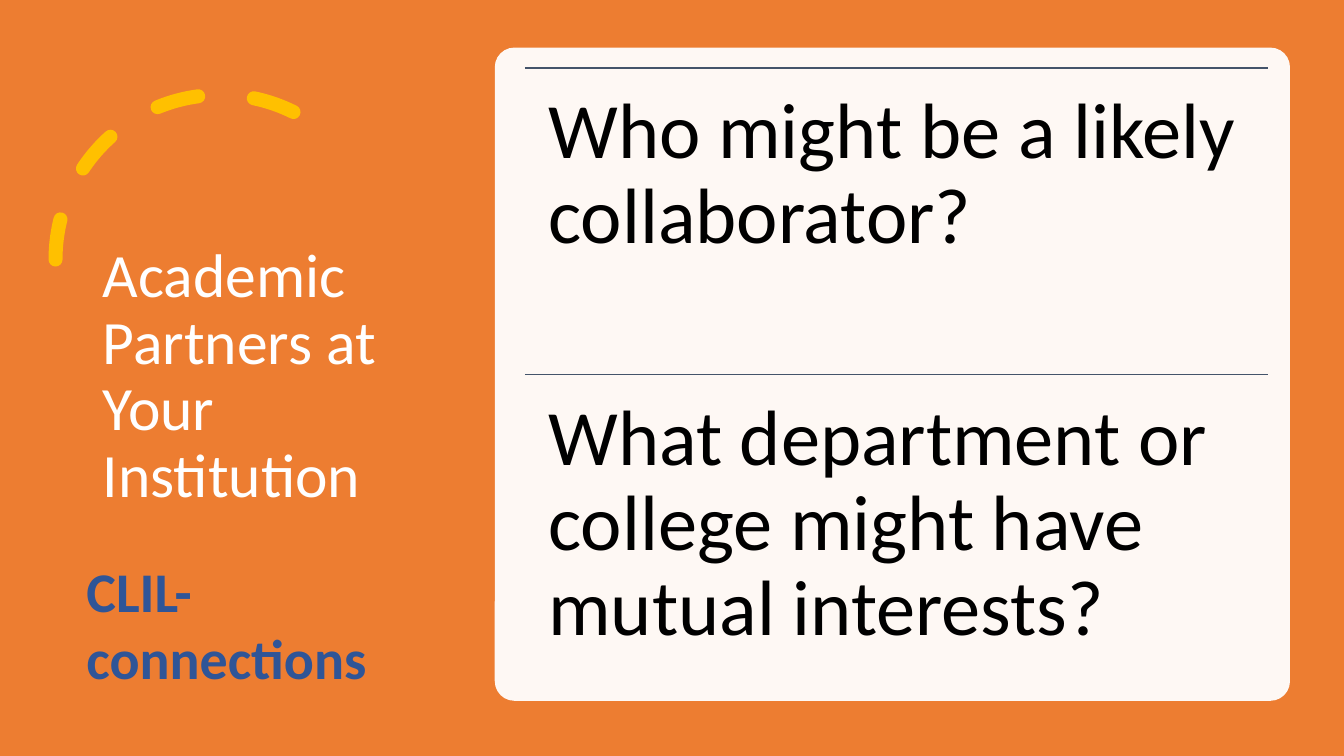
from lxml import etree
from pptx import Presentation
from pptx.dml.color import RGBColor
from pptx.enum import dml, shapes, text
from pptx.oxml import ns
from pptx.util import Cm, Pt

ORANGE = RGBColor(0xED, 0x7D, 0x31)
GOLD = RGBColor(0xFF, 0xC0, 0x00)
WHITE = RGBColor(0xFF, 0xFF, 0xFF)
BLACK = RGBColor(0x00, 0x00, 0x00)
SLATE = RGBColor(0x44, 0x54, 0x6A)
BLUE = RGBColor(0x2F, 0x55, 0x97)

FONT = "Calibri"
WIDTH, HEIGHT = Cm(33.87), Cm(19.05)
QUESTIONS = [
    "Who might be a likely collaborator?",
    "What department or college might have mutual interests?",
]


def add_shape(slide, kind, box, fill=None):
    sp = slide.shapes.add_shape(kind, *box)
    sp.shadow.inherit = False
    sp.line.fill.background()
    if fill is None:
        sp.fill.background()
    else:
        sp.fill.solid()
        sp.fill.fore_color.rgb = fill
    return sp


def add_text(slide, box, words, size, color, bold=False, spacing=0.9,
             anchor=text.MSO_ANCHOR.TOP, inset=None):
    tf = slide.shapes.add_textbox(*box).text_frame
    tf.word_wrap = True
    tf.vertical_anchor = anchor
    if inset is not None:
        tf.margin_left = tf.margin_right = inset
        tf.margin_top = tf.margin_bottom = inset
    p = tf.paragraphs[0]
    p.line_spacing = spacing
    r = p.add_run()
    r.text = words
    r.font.name = FONT
    r.font.size = Pt(size)
    r.font.bold = bold
    r.font.color.rgb = color


def add_rule(slide, left, top, width):
    line = slide.shapes.add_connector(
        shapes.MSO_CONNECTOR.STRAIGHT, left, top, left + width, top)
    line.line.color.rgb = SLATE
    line.line.width = Pt(1)
    etree.SubElement(line._element.spPr, ns.qn("a:effectLst"))


def add_title_panel(slide, left, top):
    # Dashed arc, mirrored so that it opens to the right
    side = Cm(8.3)
    arc = add_shape(slide, shapes.MSO_SHAPE.ARC,
                    (left + Cm(1.4), top + Cm(2.39), side, side))
    arc.adjustments[0] = 146.13
    arc.adjustments[1] = 0
    arc.line.color.rgb = GOLD
    arc.line.width = Pt(10)
    arc.line.dash_style = dml.MSO_LINE.DASH
    arc.line._ln.set("cap", "rnd")
    arc._element.spPr.find(ns.qn("a:xfrm")).set("flipH", "1")

    # Title and series name
    add_text(slide, (left + Cm(2.34), top + Cm(1.78), Cm(8.2), Cm(15.47)),
             "Academic Partners at Your Institution", 44, WHITE,
             anchor=text.MSO_ANCHOR.MIDDLE)
    add_text(slide, (left + Cm(1.93), top + Cm(13.89), Cm(10.16), Cm(3.68)),
             "CLIL-connections", 40, BLUE, bold=True, spacing=1.0)


def add_question_card(slide, left, top, width, height):
    # Rounded, slightly transparent card
    card = add_shape(slide, shapes.MSO_SHAPE.ROUNDED_RECTANGLE,
                     (left, top, width, height), WHITE)
    card.adjustments[0] = 0.03
    color = card._element.spPr.find(".//" + ns.qn("a:srgbClr"))
    etree.SubElement(color, ns.qn("a:alpha")).set("val", "95000")

    # One rule and one question per row
    row_left, row_width, row_height = left + Cm(0.76), Cm(18.72), Cm(7.73)
    for i, question in enumerate(QUESTIONS):
        row_top = top + Cm(0.51) + i * row_height
        add_rule(slide, row_left, row_top, row_width)
        add_text(slide, (row_left, row_top, row_width, row_height),
                 question, 56, BLACK, inset=Cm(0.59))


def main():
    prs = Presentation()
    prs.slide_width, prs.slide_height = WIDTH, HEIGHT
    slide = prs.slides.add_slide(prs.slide_layouts[6])
    add_shape(slide, shapes.MSO_SHAPE.RECTANGLE, (0, 0, WIDTH, HEIGHT), ORANGE)
    add_title_panel(slide, 0, 0)
    add_question_card(slide, Cm(12.47), Cm(1.2), Cm(20.04), Cm(16.46))
    prs.save("out.pptx")


if __name__ == "__main__":
    main()
